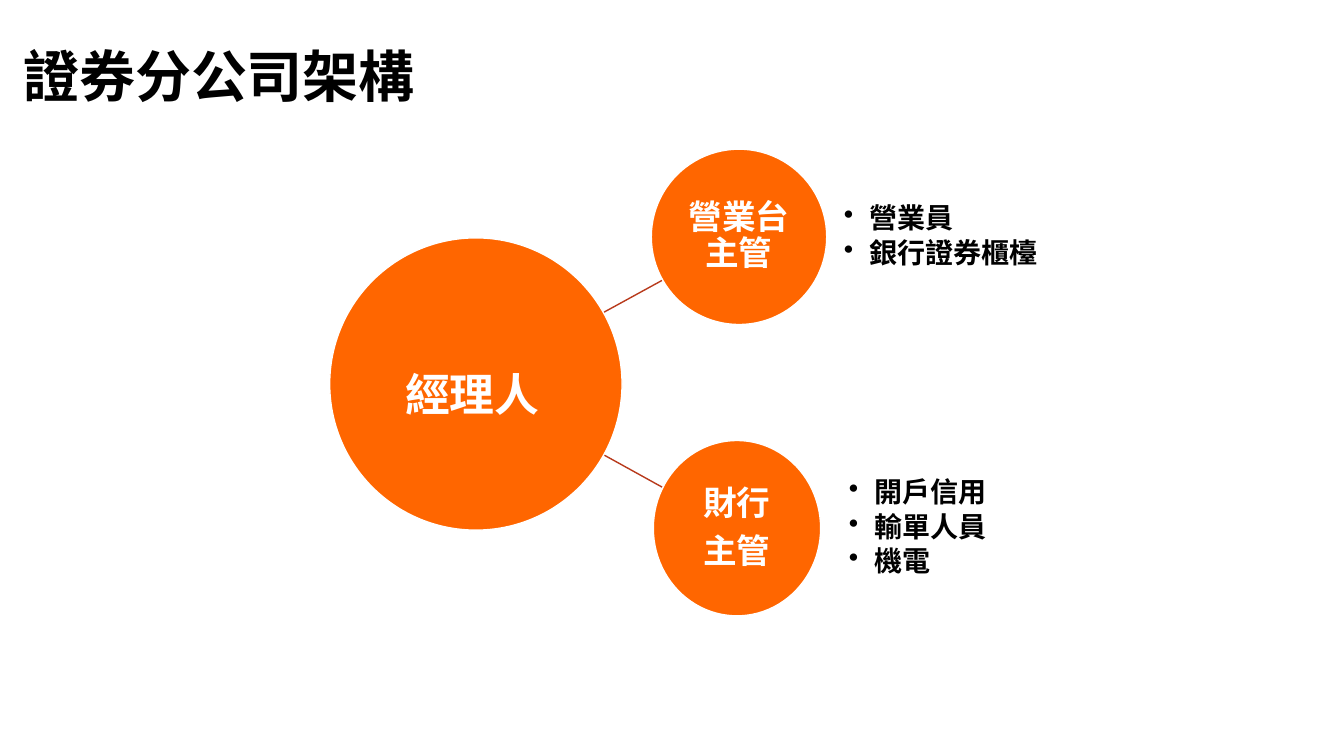
from lxml import etree
from pptx import Presentation
from pptx.dml.color import RGBColor
from pptx.enum.shapes import MSO_CONNECTOR, MSO_SHAPE
from pptx.enum.text import MSO_ANCHOR, MSO_AUTO_SIZE, PP_ALIGN
from pptx.oxml.ns import qn
from pptx.util import Inches, Pt

FONT = "Noto Sans CJK SC"
ORANGE, RED, WHITE, BLACK = "FF6600", "B83A1C", "FFFFFF", "000000"


def color(value):
    return RGBColor.from_string(value)


def write(frame, lines, size, ink, align=PP_ALIGN.LEFT, inset=None, bullets=False, **spacing):
    frame.word_wrap = True
    if inset is not None:
        frame.vertical_anchor = MSO_ANCHOR.MIDDLE
        for side in ("left", "top", "right", "bottom"):
            setattr(frame, f"margin_{side}", Inches(inset))
    for index, line in enumerate(lines):
        para = frame.paragraphs[0] if index == 0 else frame.add_paragraph()
        for name, value in {"alignment": align, **spacing}.items():
            setattr(para, name, value)
        if bullets:
            properties = para._p.get_or_add_pPr()
            properties.set("marL", str(Inches(0.25)))
            properties.set("indent", str(Inches(-0.25)))
            etree.SubElement(properties, qn("a:buChar")).set("char", "•")
        span = para.add_run()
        span.text = line
        for name, value in {"size": Pt(size), "name": FONT, "bold": True}.items():
            setattr(span.font, name, value)
        span.font.color.rgb = color(ink)
        etree.SubElement(span._r.get_or_add_rPr(), qn("a:ea")).set("typeface", FONT)


deck = Presentation()
deck.slide_width, deck.slide_height = Inches(13.33), Inches(7.5)
page = deck.slides.add_slide(deck.slide_layouts[5])

# Title
title = page.shapes.title
title.left, title.top, title.width, title.height = map(Inches, (0.13, 0.36, 4.69, 0.77))
title.text_frame.vertical_anchor = MSO_ANCHOR.TOP
title.text_frame.auto_size = MSO_AUTO_SIZE.SHAPE_TO_FIT_TEXT
write(title.text_frame, ["證券分公司架構"], 40, BLACK)

# Links from the manager to the two supervisors
for start_x, start_y, end_x, end_y in [(5.73, 4.37, 6.58, 4.84), (5.73, 3.24, 6.57, 2.78)]:
    link = page.shapes.add_connector(
        MSO_CONNECTOR.STRAIGHT, *map(Inches, (start_x, start_y, end_x, end_y)))
    link.line.color.rgb = color(RED)
    link.line.width = Pt(1)
    etree.SubElement(link._element.spPr, qn("a:effectLst"))

# Circles: place and role
circles = [
    ((3.27, 2.36, 2.9, 2.9), []),
    ((6.46, 1.48, 1.74, 1.74), ["營業台主管"]),
    ((6.48, 4.37, 1.66, 1.74), ["財行", "主管"]),
]
for place, role in circles:
    circle = page.shapes.add_shape(MSO_SHAPE.OVAL, *map(Inches, place))
    circle.shadow.inherit = False
    circle.fill.solid()
    circle.fill.fore_color.rgb = color(ORANGE)
    circle.line.color.rgb = color(WHITE)
    circle.line.width = Pt(1)
    write(circle.text_frame, role, 24, WHITE, PP_ALIGN.CENTER, 0.02,
          line_spacing=0.9, space_after=Pt(8.4))

# Manager label
label = page.shapes.add_textbox(*map(Inches, (3.92, 3.59, 1.55, 0.64)))
write(label.text_frame, ["經理人"], 32, WHITE)
label.text_frame.word_wrap = False
label.text_frame.auto_size = MSO_AUTO_SIZE.SHAPE_TO_FIT_TEXT

# Teams beside each supervisor
teams = [
    ((8.37, 1.48, 2.61, 1.74), ["營業員", "銀行證券櫃檯"]),
    ((8.42, 4.37, 2.49, 1.74), ["開戶信用", "輸單人員", "機電"]),
]
for place, members in teams:
    box = page.shapes.add_textbox(*map(Inches, place))
    write(box.text_frame, members, 20, BLACK, inset=0, bullets=True,
          line_spacing=0.9, space_after=Pt(3))

deck.save("out.pptx")
